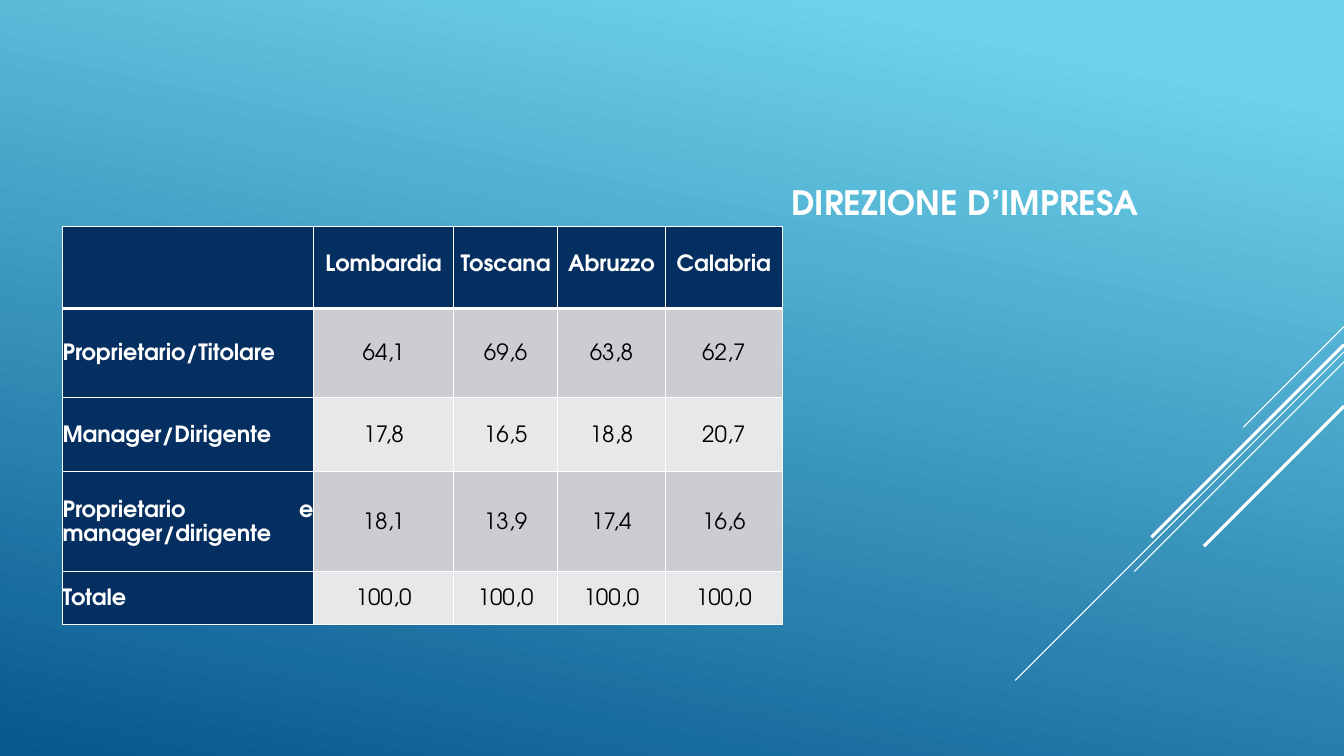
import pptx
import pptx.util
import pptx.dml.color
import pptx.enum.shapes
import pptx.enum.text
import pptx.oxml
import pptx.oxml.ns

Inches, Pt = pptx.util.Inches, pptx.util.Pt
RGB = pptx.dml.color.RGBColor
ALIGN, ANCHOR = pptx.enum.text.PP_ALIGN, pptx.enum.text.MSO_ANCHOR

WHITE = RGB(0xFF, 0xFF, 0xFF)
BLACK = RGB(0, 0, 0)
NAVY = RGB(0x05, 0x2F, 0x61)
GREY = RGB(0xCC, 0xCD, 0xD2)
PALE = RGB(0xE7, 0xE8, 0xEA)
SKY = RGB(0x6E, 0xD2, 0xEB)
DEEP = RGB(0x06, 0x58, 0x8E)
FONT = "TeX Gyre Adventor"

WIDE, HIGH = 13.33, 7.5
TITLE = "DIREZIONE D’IMPRESA"
ROWS = [
    ("", "Lombardia", "Toscana", "Abruzzo", "Calabria"),
    ("Proprietario/Titolare", "64,1", "69,6", "63,8", "62,7"),
    ("Manager/Dirigente ", "17,8", "16,5", "18,8", "20,7"),
    ("Proprietario e manager/dirigente", "18,1", "13,9", "17,4", "16,6"),
    ("Totale", "100,0", "100,0", "100,0", "100,0"),
]
COLS = [2.49, 1.39, 1.03, 1.07, 1.16]
TALL = [0.81, 0.88, 0.74, 0.99, 0.53]
RAYS = [
    (3.24, 1.0, 0.75),
    (3.49, 3.26, 0.75),
    (3.59, 2.08, 0.75),
    (3.42, 1.91, 2.25),
    (4.03, 1.39, 2.25),
]


def write(frame, text, size=16, color=WHITE, bold=True, align=ALIGN.LEFT, space=None):
    par = frame.paragraphs[0]
    par.alignment = align
    if space:
        par.line_spacing = space
    run = par.add_run()
    run.text = text
    font = run.font
    font.name, font.size, font.bold = FONT, Pt(size), bold
    font.color.rgb = color


def edge(cell, side, width):
    line = pptx.oxml.parse_xml(
        f'<a:ln{side} {pptx.oxml.ns.nsdecls("a")} w="{Pt(width)}">'
        f'<a:solidFill><a:srgbClr val="{WHITE}"/></a:solidFill></a:ln{side}>'
    )
    props = cell._tc.get_or_add_tcPr()
    props.insert("LRTB".index(side), line)


def draw_rays(slide):
    for top, reach, width in RAYS:
        ray = slide.shapes.add_connector(
            pptx.enum.shapes.MSO_CONNECTOR.STRAIGHT,
            Inches(WIDE), Inches(top), Inches(WIDE - reach), Inches(top + reach),
        )
        ray.line.color.rgb = WHITE
        ray.line.width = Pt(width)
        ray._element.spPr.append(
            pptx.oxml.parse_xml(f'<a:effectLst {pptx.oxml.ns.nsdecls("a")}/>')
        )


def draw_table(slide):
    table = slide.shapes.add_table(
        len(ROWS), len(COLS), Inches(0.62), Inches(2.25),
        Inches(sum(COLS)), Inches(sum(TALL)),
    ).table
    for col, width in zip(table.columns, COLS):
        col.width = Inches(width)
    for row, height in zip(table.rows, TALL):
        row.height = Inches(height)
    for r, row in enumerate(ROWS):
        for c, text in enumerate(row):
            cell = table.cell(r, c)
            head = r == 0 or c == 0
            cell.margin_left = cell.margin_right = 0
            cell.margin_top = cell.margin_bottom = 0
            cell.vertical_anchor = ANCHOR.MIDDLE
            cell.fill.solid()
            cell.fill.fore_color.rgb = NAVY if head else GREY if r % 2 else PALE
            for side in "LRTB":
                thick = (r, side) in ((0, "B"), (1, "T"))
                edge(cell, side, 3 if thick else 1)
            if text:
                write(
                    cell.text_frame, text,
                    color=WHITE if head else BLACK, bold=head,
                    align=ALIGN.CENTER if c else ALIGN.JUSTIFY,
                    space=1.15 if r else Pt(12),
                )


def main():
    deck = pptx.Presentation()
    deck.slide_width, deck.slide_height = Inches(WIDE), Inches(HIGH)
    slide = deck.slides.add_slide(deck.slide_layouts[5])

    fill = slide.background.fill
    fill.gradient()
    fill.gradient_angle = 258
    for stop, place, color in zip(fill.gradient_stops, (0.1, 1), (SKY, DEEP)):
        stop.position = place
        stop.color.rgb = color

    draw_rays(slide)
    title = slide.shapes.title
    title.left, title.top = Inches(7.75), Inches(0.75)
    title.width, title.height = Inches(4), Inches(1.5)
    title.text_frame.vertical_anchor = ANCHOR.BOTTOM
    write(title.text_frame, TITLE, size=24)
    draw_table(slide)
    deck.save("out.pptx")


if __name__ == "__main__":
    main()
